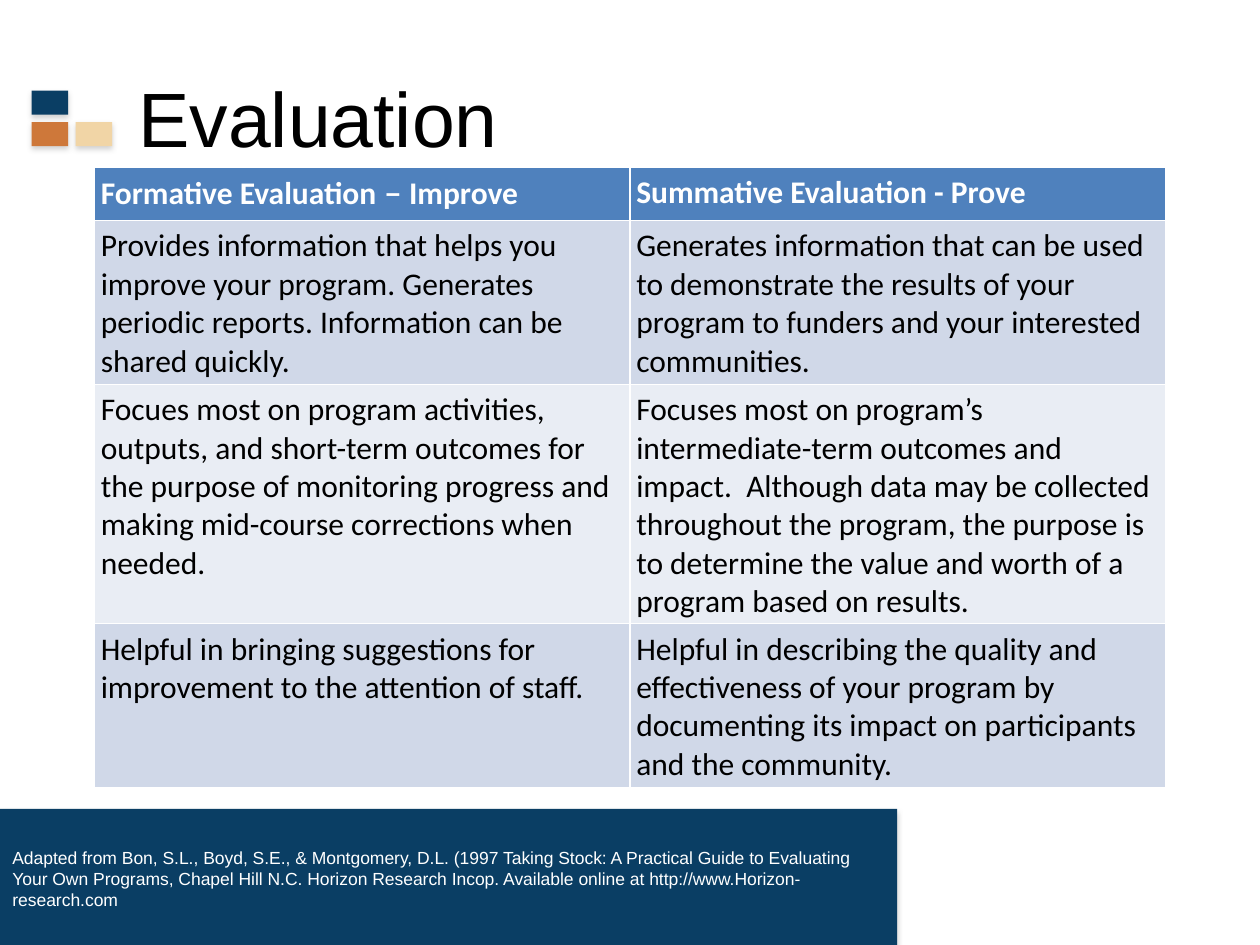
from typing import NamedTuple

from lxml import etree
from pptx import Presentation, util as u
from pptx.dml.color import RGBColor
from pptx.enum import shapes, text
from pptx.oxml import ns

WIDE, HIGH = 10, 7.5
NAVY = RGBColor(0x0A, 0x3E, 0x64)
RUST = RGBColor(0xCE, 0x78, 0x3A)
SAND = RGBColor(0xF1, 0xD5, 0xA6)
BLUE = RGBColor(0x4F, 0x81, 0xBD)
BANDS = RGBColor(0xD0, 0xD8, 0xE8), RGBColor(0xE9, 0xED, 0xF4)
WHITE = RGBColor(255, 255, 255)
BLACK = RGBColor(0, 0, 0)


class Box(NamedTuple):
    """A place on the slide, in inches."""
    x: float
    y: float
    w: float
    h: float

    def emu(self) -> list[int]:
        return [u.Inches(v) for v in self]


class Tile(NamedTuple):
    col: int
    row: int
    fill: RGBColor


TILES = [Tile(0, 0, NAVY), Tile(0, 1, RUST), Tile(1, 1, SAND)]
FOOT = Box(0, 6.42, 7.12, HIGH - 6.42)
GRID = Box(0.75, 1.33, 8.5, 4.59)
ROWS = [0.42, 1.18, 1.81, 1.18]
CELLS = [
    ("Formative Evaluation – Improve",
     "Summative Evaluation - Prove"),
    ("Provides information that helps you improve your program. "
     "Generates periodic reports. Information can be shared quickly.",
     "Generates information that can be used to demonstrate the results "
     "of your program to funders and your interested communities."),
    ("Focues most on program activities, outputs, and short-term outcomes "
     "for the purpose of monitoring progress and making mid-course "
     "corrections when needed.",
     "Focuses most on program’s intermediate-term outcomes and impact.  "
     "Although data may be collected throughout the program, the purpose is "
     "to determine the value and worth of a program based on results."),
    ("Helpful in bringing suggestions for improvement to the attention "
     "of staff.",
     "Helpful in describing the quality and effectiveness of your program "
     "by documenting its impact on participants and the community."),
]
CITE = ("Adapted from Bon, S.L., Boyd, S.E., & Montgomery, D.L. (1997 Taking "
        "Stock: A Practical Guide to Evaluating Your Own Programs, Chapel "
        "Hill N.C. Horizon Research Incop. Available online at "
        "http://www.Horizon-research.com")


def write(frame, words: str, *, size: float, color: RGBColor,
          font: str = "Arial", bold: bool = False, dash: str = "") -> None:
    """Fill a text frame; dash names another font for any en dash."""
    frame.word_wrap = True
    para = frame.paragraphs[0]
    head, mark, tail = words.partition("–")
    for part, face in ((head, font), (mark, dash or font), (tail, font)):
        if part:
            run = para.add_run()
            run.text = part
            run.font.name, run.font.size = face, u.Pt(size)
            run.font.bold, run.font.color.rgb = bold, color


def block(slide, box: Box, fill: RGBColor) -> None:
    """Draw a plain rectangle with a soft shadow below it."""
    shape = slide.shapes.add_shape(shapes.MSO_SHAPE.RECTANGLE, *box.emu())
    shape.fill.solid()
    shape.fill.fore_color.rgb = fill
    shape.line.fill.background()
    shape.shadow.inherit = False
    effect = shape._element.spPr.find(ns.qn("a:effectLst"))
    shade = etree.SubElement(
        effect, ns.qn("a:outerShdw"), blurRad=str(u.Pt(3.1)),
        dist=str(u.Pt(1.8)), dir="5400000", rotWithShape="0")
    tint = etree.SubElement(shade, ns.qn("a:srgbClr"), val="808080")
    etree.SubElement(tint, ns.qn("a:alpha"), val="35000")


def label(slide, box: Box, words: str, anchor, **form) -> None:
    frame = slide.shapes.add_textbox(*box.emu()).text_frame
    frame.vertical_anchor = anchor
    write(frame, words, **form)


def chart(slide) -> None:
    """Draw the table that compares the two kinds of evaluation."""
    table = slide.shapes.add_table(
        len(CELLS), len(CELLS[0]), *GRID.emu()).table
    for r, (line, high) in enumerate(zip(CELLS, ROWS)):
        table.rows[r].height = u.Inches(high)
        top = r == 0
        for c, words in enumerate(line):
            cell = table.cell(r, c)
            cell.margin_left = cell.margin_right = u.Inches(0.05)
            cell.margin_top = cell.margin_bottom = u.Inches(0.05)
            cell.fill.solid()
            cell.fill.fore_color.rgb = BLUE if top else BANDS[(r - 1) % 2]
            write(cell.text_frame, words, size=18, font="Calibri", bold=top,
                  color=WHITE if top else BLACK, dash="Lato")


def main() -> None:
    deck = Presentation()
    deck.slide_width, deck.slide_height = u.Inches(WIDE), u.Inches(HIGH)
    slide = deck.slides.add_slide(deck.slide_layouts[6])
    block(slide, FOOT, NAVY)
    for tile in TILES:
        box = Box(0.25 + 0.35 * tile.col, 0.72 + 0.25 * tile.row, 0.29, 0.19)
        block(slide, box, tile.fill)
    label(slide, Box(1, 0.3, 8.5, 1.25), "Evaluation",
          text.MSO_ANCHOR.MIDDLE, size=44, color=BLACK)
    chart(slide)
    label(slide, Box(0, 6.67, 7, 0.62), CITE,
          text.MSO_ANCHOR.TOP, size=10, color=WHITE)
    deck.save("out.pptx")


if __name__ == "__main__":
    main()
